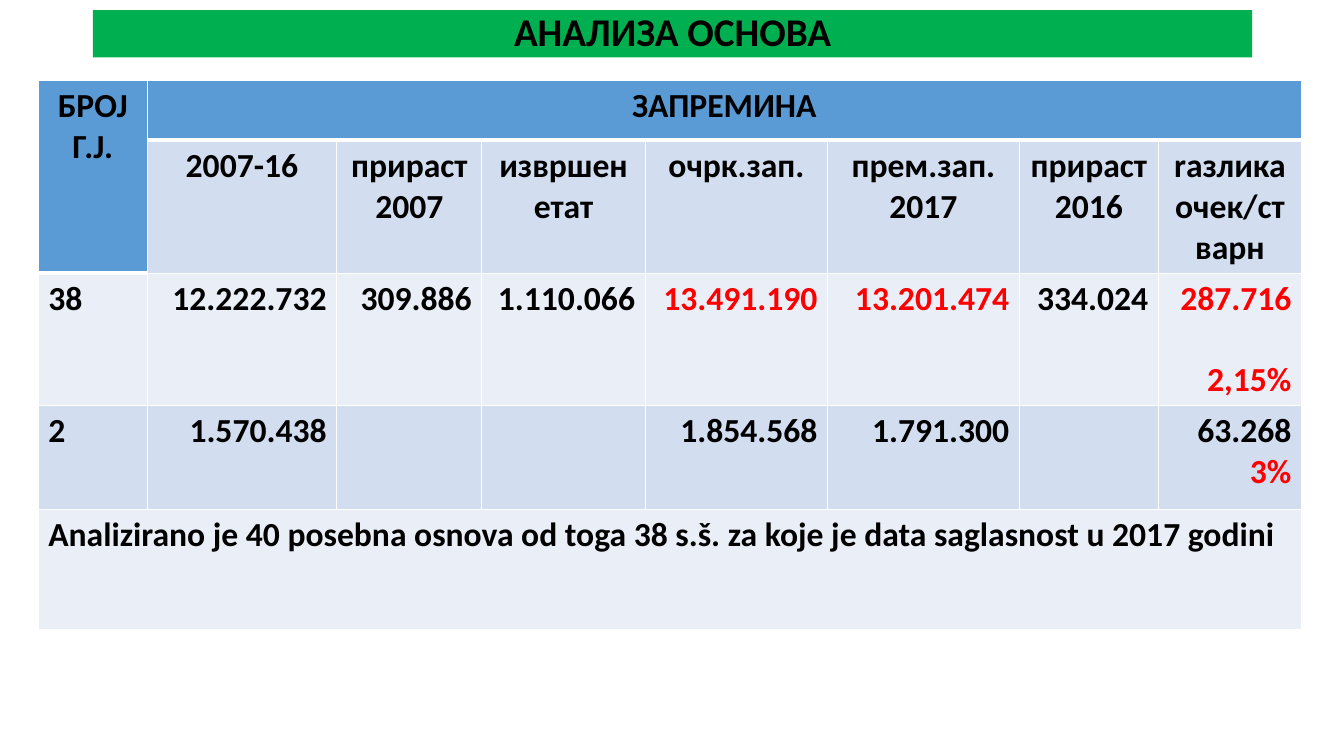
import pptx
import pptx.util
import pptx.dml.color
import pptx.enum.text
import lxml.etree
from dataclasses import dataclass

Inches = pptx.util.Inches
Align = pptx.enum.text.PP_ALIGN
Anchor = pptx.enum.text.MSO_ANCHOR


@dataclass(frozen=True)
class Theme:
    font: str = "Calibri"
    title: int = 28
    body: int = 24
    ink: str = "000000"
    red: str = "FF0000"
    green: str = "00B050"
    blue: str = "5B9BD5"
    bands: tuple = ("EAEFF7", "D2DEEF")
    rule: str = "FFFFFF"
    thin: int = 1
    thick: int = 3


THEME = Theme()
COLS = (1.08, 1.88, 1.44, 1.62, 1.81, 1.9, 1.38, 1.42)
ROWS = (0.59, 1.03, 1.03, 1.03, 1.19)
TEXTS = (
    ("БРОЈ Г.Ј.", "ЗАПРЕМИНА"),
    ("", "2007-16", "прираст 2007", "извршен етат", "очрк.зап.",
     "прем.зап. 2017", "прираст 2016", "rазлика очек/стварн"),
    ("38", "12.222.732", "309.886", "1.110.066", "13.491.190",
     "13.201.474", "334.024", "287.716\n2,15%"),
    ("2", "1.570.438", "", "", "1.854.568", "1.791.300", "", "63.268\n3%"),
    ("Analizirano je 40 posebna osnova od toga 38 s.š. "
     "za koje je data saglasnost u 2017 godini",),
)
MERGES = (((0, 0), (1, 0)), ((0, 1), (0, 7)), ((4, 0), (4, 7)))
REDS = {(2, 4, 0), (2, 5, 0), (2, 7, 0), (2, 7, 1), (3, 7, 1)}


def rgb(code):
    return pptx.dml.color.RGBColor.from_string(code)


def style(para, size, color, align):
    para.alignment = align
    for run in para.runs:
        run.font.name = THEME.font
        run.font.size = pptx.util.Pt(size)
        run.font.bold = True
        run.font.color.rgb = rgb(color)


def paint(shape, color):
    shape.fill.solid()
    shape.fill.fore_color.rgb = rgb(color)


def edge(cell, side, width):
    props = cell._tc.get_or_add_tcPr()
    space = "{http://schemas.openxmlformats.org/drawingml/2006/main}"
    line = lxml.etree.SubElement(props, space + "ln" + side,
                                 w=str(pptx.util.Pt(width)))
    fill = lxml.etree.SubElement(line, space + "solidFill")
    lxml.etree.SubElement(fill, space + "srgbClr", val=THEME.rule)


# Title band
def add_title(slide, box):
    title = slide.shapes.title
    title.left, title.top, title.width, title.height = map(Inches, box)
    paint(title, THEME.green)
    frame = title.text_frame
    frame.text = "АНАЛИЗА ОСНОВА"
    frame.vertical_anchor = Anchor.MIDDLE
    frame.paragraphs[0].line_spacing = 0.9
    style(frame.paragraphs[0], THEME.title, THEME.ink, Align.CENTER)


# One table cell: rules, fill and text
def fill_cell(cell, row, col, text):
    last = 1 if col == 0 else 0  # last header row of this column
    for side in "LRTB":
        heavy = (side == "B" and row == last) or (side == "T" and row == last + 1)
        edge(cell, side, THEME.thick if heavy else THEME.thin)
    paint(cell, THEME.blue if row <= last else THEME.bands[row % 2])
    if not text:
        return
    cell.text_frame.text = text
    if row < 2:
        align = Align.CENTER
    else:
        align = Align.RIGHT if col else Align.LEFT
    for num, para in enumerate(cell.text_frame.paragraphs):
        color = THEME.red if (row, col, num) in REDS else THEME.ink
        style(para, THEME.body, color, align)
        if row == 2 and num:
            para.space_before = pptx.util.Pt(29)


# Volume table
def add_volumes(slide, left, top):
    table = slide.shapes.add_table(
        len(ROWS), len(COLS), Inches(left), Inches(top),
        Inches(sum(COLS)), Inches(sum(ROWS))).table
    for column, width in zip(table.columns, COLS):
        column.width = Inches(width)
    for line, height in zip(table.rows, ROWS):
        line.height = Inches(height)
    for row, texts in enumerate(TEXTS):
        for col in range(len(COLS)):
            text = texts[col] if col < len(texts) else ""
            fill_cell(table.cell(row, col), row, col, text)
    for start, end in MERGES:
        table.cell(*start).merge(table.cell(*end))


def main():
    deck = pptx.Presentation()
    deck.slide_width, deck.slide_height = Inches(13.33), Inches(7.5)
    slide = deck.slides.add_slide(deck.slide_layouts[5])
    add_title(slide, (0.92, 0.1, 11.5, 0.47))
    add_volumes(slide, 0.38, 0.8)
    deck.save("out.pptx")


if __name__ == "__main__":
    main()
